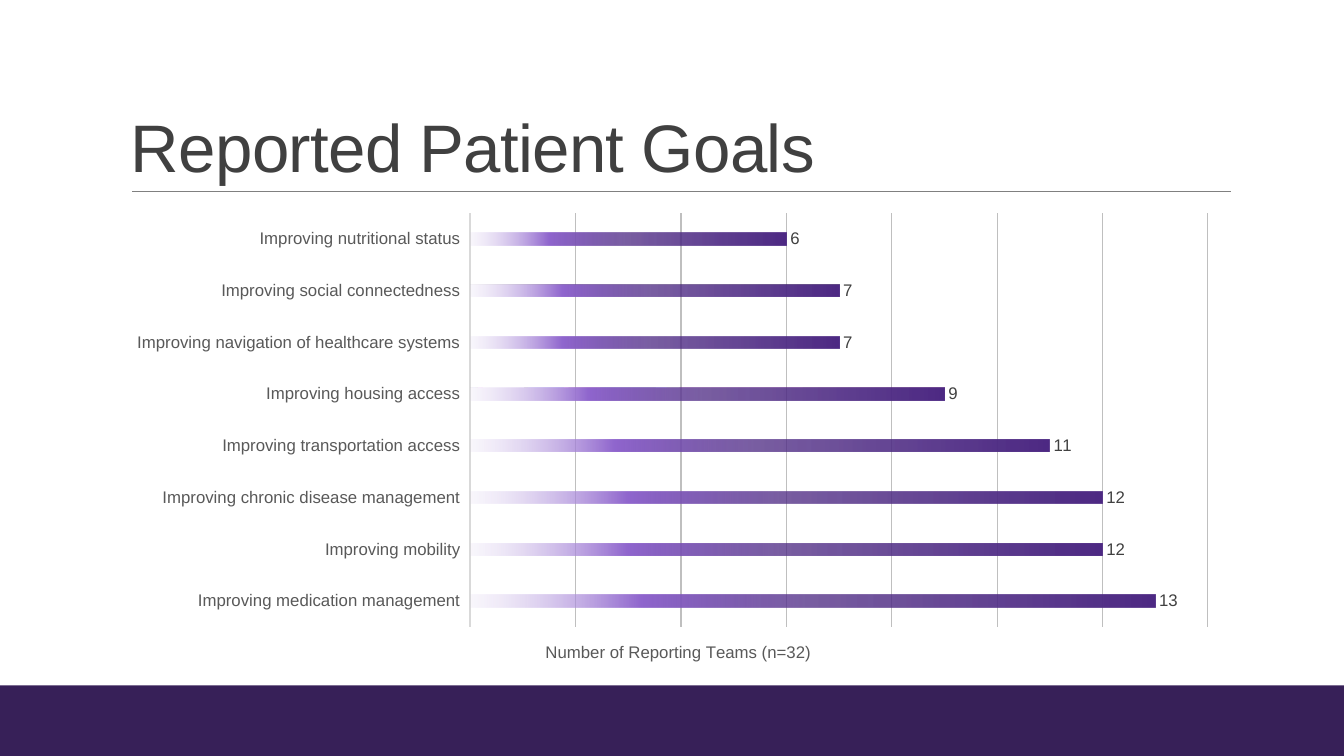
"""Build the slide of reported patient goals with a horizontal bar chart."""
from lxml import etree
from pptx import Presentation
from pptx.chart.data import CategoryChartData
from pptx.dml.color import RGBColor
from pptx.enum.chart import XL_CHART_TYPE, XL_LABEL_POSITION, XL_TICK_LABEL_POSITION, XL_TICK_MARK
from pptx.enum.shapes import MSO_CONNECTOR, MSO_SHAPE
from pptx.enum.text import MSO_ANCHOR
from pptx.oxml import parse_xml
from pptx.oxml.ns import nsdecls, qn
from pptx.util import Inches, Pt

BAR_CLUSTERED = XL_CHART_TYPE.BAR_CLUSTERED
OUTSIDE_END = XL_LABEL_POSITION.OUTSIDE_END
LABELS_LOW = XL_TICK_LABEL_POSITION.LOW
NO_TICK = XL_TICK_MARK.NONE
STRAIGHT = MSO_CONNECTOR.STRAIGHT
RECTANGLE = MSO_SHAPE.RECTANGLE
BOTTOM = MSO_ANCHOR.BOTTOM

FOOTER_PURPLE = RGBColor(0x37, 0x20, 0x58)
RULE_GRAY = RGBColor(0x80, 0x80, 0x80)
DARK_TEXT = RGBColor(0x40, 0x40, 0x40)
AXIS_TEXT = RGBColor(0x59, 0x59, 0x59)
AXIS_LINE = RGBColor(0xD9, 0xD9, 0xD9)
GRID_LINE = RGBColor(0xBF, 0xBF, 0xBF)
BLACK = RGBColor(0, 0, 0)
DEEP_PURPLE = RGBColor(0x4E, 0x2A, 0x84)
MID_PURPLE = RGBColor(0x90, 0x66, 0xCE)
PALE_PURPLE = RGBColor(0xDA, 0xCC, 0xEF)

FONT = "Arial"
BAR_STOPS = [
    (0, DEEP_PURPLE, 100),
    (51, DEEP_PURPLE, 75),
    (75, MID_PURPLE, 100),
    (100, PALE_PURPLE, 15),
]
GOALS = [
    ("Improving medication management", 13),
    ("Improving mobility", 12),
    ("Improving chronic disease management", 12),
    ("Improving transportation access", 11),
    ("Improving housing access", 9),
    ("Improving navigation of healthcare systems", 7),
    ("Improving social connectedness", 7),
    ("Improving nutritional status", 6),
]


def style_font(font, size, color):
    """Set the typeface, size and colour of a font."""
    font.name = FONT
    font.size = Pt(size)
    font.bold = False
    font.color.rgb = color


def add_footer_band(slide):
    """Add the purple band along the bottom edge."""
    band = slide.shapes.add_shape(RECTANGLE, Inches(0), Inches(6.8), Inches(13.33), Inches(0.7))
    band.shadow.inherit = False
    band.fill.solid()
    band.fill.fore_color.rgb = FOOTER_PURPLE
    band.line.fill.background()


def add_title_rule(slide):
    """Add the thin rule under the title."""
    rule = slide.shapes.add_connector(STRAIGHT, Inches(1.31), Inches(1.9), Inches(12.21), Inches(1.9))
    rule.line.color.rgb = RULE_GRAY
    rule.line.width = Pt(0.5)
    etree.SubElement(rule.element.spPr, qn("a:effectLst"))


def add_title(slide, wording):
    """Add the slide title, set on the bottom of its box."""
    title = slide.shapes.add_textbox(Inches(1.2), Inches(0.31), Inches(11), Inches(1.59))
    frame = title.text_frame
    frame.word_wrap = True
    frame.vertical_anchor = BOTTOM
    paragraph = frame.paragraphs[0]
    paragraph.line_spacing = 0.85
    run = paragraph.add_run()
    run.text = wording
    style_font(run.font, 48, DARK_TEXT)
    run.font._element.set("spc", "-50")


def place(parent, index, **fractions):
    """Give a chart part a manual layout in fractions of the chart."""
    for old_layout in parent.findall(qn("c:layout")):
        parent.remove(old_layout)
    target = '<c:layoutTarget val="inner"/>' if "w" in fractions else ""
    modes = "".join(f'<c:{key}Mode val="edge"/>' for key in "xy")
    values = "".join(f'<c:{key} val="{value}"/>' for key, value in fractions.items())
    parent.insert(index, parse_xml(
        f'<c:layout {nsdecls("c")}><c:manualLayout>{target}{modes}{values}</c:manualLayout></c:layout>'
    ))


def fill_bars(chart, series):
    """Fill the bars with a gradient that fades out towards the axis."""
    series.format.fill.solid()
    properties = chart.element.find(f".//{qn('c:ser')}/{qn('c:spPr')}")
    stops = "".join(
        f'<a:gs pos="{position * 1000}"><a:srgbClr val="{color}">'
        f'<a:alpha val="{opacity * 1000}"/></a:srgbClr></a:gs>'
        for position, color, opacity in BAR_STOPS
    )
    gradient = parse_xml(
        f'<a:gradFill {nsdecls("a")}><a:gsLst>{stops}</a:gsLst>'
        '<a:lin ang="10800000" scaled="0"/></a:gradFill>'
    )
    properties.replace(properties.find(qn("a:solidFill")), gradient)


def style_axes(chart):
    """Style the goal axis and the hidden count axis with its grid."""
    goal_axis = chart.category_axis
    goal_axis.major_tick_mark = goal_axis.minor_tick_mark = NO_TICK
    goal_axis.tick_label_position = LABELS_LOW
    goal_axis.has_major_gridlines = False
    style_font(goal_axis.tick_labels.font, 12, AXIS_TEXT)
    goal_axis.format.line.color.rgb = AXIS_LINE
    goal_axis.format.line.width = Pt(1.5)

    count_axis = chart.value_axis
    count_axis.minimum_scale = 0
    count_axis.maximum_scale = 14
    count_axis.major_unit = 2
    count_axis.has_major_gridlines = True
    count_axis.major_gridlines.format.line.color.rgb = GRID_LINE
    count_axis.major_gridlines.format.line.width = Pt(0.75)
    count_axis.visible = False


def add_caption(chart, wording):
    """Put the chart title below the bars."""
    chart.has_title = True
    run = chart.chart_title.text_frame.paragraphs[0].add_run()
    run.text = wording
    style_font(run.font, 12, AXIS_TEXT)
    place(chart.chart_title.element, 1, x=0.38, y=0.91)


def add_goal_chart(slide):
    """Add the bar chart of teams reporting each goal."""
    goal_data = CategoryChartData()
    goal_data.categories = [goal for goal, _ in GOALS]
    goal_data.add_series("Series 1", [teams for _, teams in GOALS])
    chart = slide.shapes.add_chart(
        BAR_CLUSTERED, Inches(1.2), Inches(2.02), Inches(11), Inches(4.74), goal_data
    ).chart
    style_font(chart.font, 10, BLACK)
    chart.has_legend = False

    bars = chart.plots[0]
    bars.gap_width = 326
    bars.overlap = -58
    bars.vary_by_categories = False
    bars.has_data_labels = True
    bars.data_labels.show_value = True
    bars.data_labels.position = OUTSIDE_END
    style_font(bars.data_labels.font, 12, DARK_TEXT)

    fill_bars(chart, bars.series[0])
    style_axes(chart)
    add_caption(chart, "Number of Reporting Teams (n=32)")
    place(chart.element.find(f".//{qn('c:plotArea')}"), 0, x=0.315, y=0.02, w=0.665, h=0.866)


def main():
    """Build and save the slide."""
    presentation = Presentation()
    presentation.slide_width = Inches(13.33)
    presentation.slide_height = Inches(7.5)
    slide = presentation.slides.add_slide(presentation.slide_layouts[6])
    add_footer_band(slide)
    add_title_rule(slide)
    add_title(slide, "Reported Patient Goals")
    add_goal_chart(slide)
    presentation.save("out.pptx")


if __name__ == "__main__":
    main()
